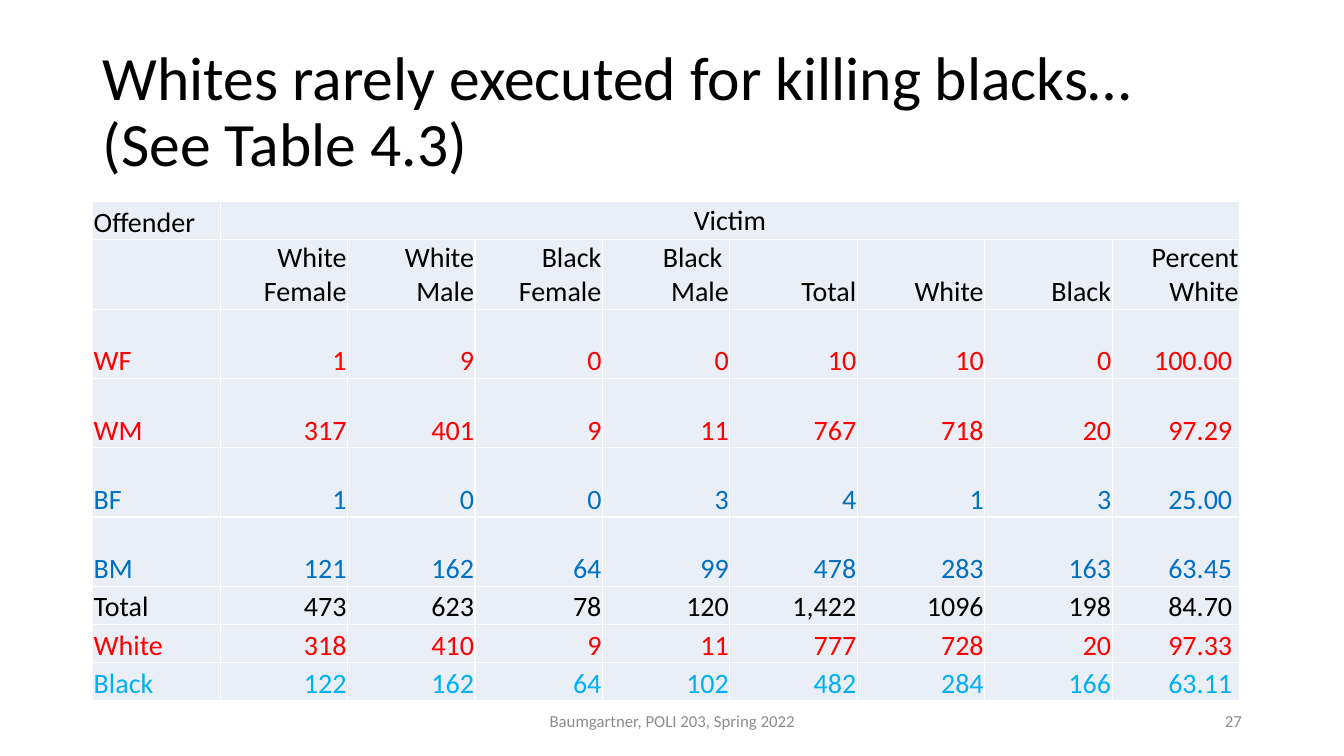
from lxml.etree import SubElement
from pptx import Presentation
from pptx.dml.color import RGBColor
from pptx.enum.text import MSO_ANCHOR, PP_ALIGN
from pptx.oxml.ns import qn
from pptx.util import Pt

FONT = "Calibri"
BLACK = RGBColor(0x00, 0x00, 0x00)
RED = RGBColor(0xFF, 0x00, 0x00)
BLUE = RGBColor(0x00, 0x70, 0xC0)
SKY = RGBColor(0x00, 0xB0, 0xF0)
GREY = RGBColor(0x8C, 0x8C, 0x8C)
PALE = RGBColor(0xEA, 0xEF, 0xF7)
WHITE = RGBColor(0xFF, 0xFF, 0xFF)

TITLE = "Whites rarely executed for killing blacks… (See Table 4.3)"
FOOTER = "Baumgartner, POLI 203, Spring 2022"
PAGE = "27"

SHORT, TALL = 27.3, 49.5
ROWS = [
    (SHORT, BLACK, ["Offender", "Victim"]),
    (TALL, BLACK, ["", "White Female", "White Male", "Black Female", "Black \nMale",
                   "Total", "White", "Black", "Percent White"]),
    (TALL, RED, ["WF", "1", "9", "0", "0", "10", "10", "0", "100.00 "]),
    (TALL, RED, ["WM", "317", "401", "9", "11", "767", "718", "20", "97.29 "]),
    (TALL, BLUE, ["BF", "1", "0", "0", "3", "4", "1", "3", "25.00 "]),
    (TALL, BLUE, ["BM", "121", "162", "64", "99", "478", "283", "163", "63.45 "]),
    (SHORT, BLACK, ["Total", "473", "623", "78", "120", "1,422", "1096", "198", "84.70 "]),
    (SHORT, RED, ["White", "318", "410", "9", "11", "777", "728", "20", "97.33 "]),
    (SHORT, SKY, ["Black", "122", "162", "64", "102", "482", "284", "166", "63.11 "]),
]
COLUMNS = 9
COLUMN_WIDTH = 91.04
TABLE_LEFT, TABLE_TOP = 66.24, 144
CELL_INSET = 0.72


def write(frame, text, size, color, align):
    for index, line in enumerate(text.split("\n")):
        paragraph = frame.paragraphs[0] if index == 0 else frame.add_paragraph()
        paragraph.alignment = align
        paragraph.font.size = Pt(size)
        if line:
            run = paragraph.add_run()
            run.text = line
            run.font.name = FONT
            run.font.size = Pt(size)
            run.font.color.rgb = color


def add_text(slide, box, text, size, color, align):
    frame = slide.shapes.add_textbox(*map(Pt, box)).text_frame
    frame.word_wrap = True
    frame.vertical_anchor = MSO_ANCHOR.MIDDLE
    write(frame, text, size, color, align)
    return frame


def add_borders(cell):
    properties = cell._tc.get_or_add_tcPr()
    for side in ("a:lnL", "a:lnR", "a:lnT", "a:lnB"):
        line = SubElement(properties, qn(side), w=str(Pt(1)))
        fill = SubElement(line, qn("a:solidFill"))
        SubElement(fill, qn("a:srgbClr"), val=str(WHITE))


def add_victim_table(slide):
    height = sum(row_height for row_height, _, _ in ROWS)
    table = slide.shapes.add_table(
        len(ROWS), COLUMNS, Pt(TABLE_LEFT), Pt(TABLE_TOP),
        Pt(COLUMN_WIDTH * COLUMNS), Pt(height)).table
    table.first_row = table.horz_banding = False
    for column in table.columns:
        column.width = Pt(COLUMN_WIDTH)
    table.cell(0, 1).merge(table.cell(0, COLUMNS - 1))
    for r, (row_height, color, texts) in enumerate(ROWS):
        table.rows[r].height = Pt(row_height)
        for c in range(COLUMNS):
            cell = table.cell(r, c)
            add_borders(cell)
            cell.fill.solid()
            cell.fill.fore_color.rgb = PALE
            cell.margin_left = cell.margin_right = cell.margin_top = Pt(CELL_INSET)
            cell.margin_bottom = 0
            cell.vertical_anchor = MSO_ANCHOR.BOTTOM
            if c < len(texts):
                align = PP_ALIGN.LEFT if c == 0 else PP_ALIGN.RIGHT
                if cell.is_merge_origin:
                    align = PP_ALIGN.CENTER
                    cell.vertical_anchor = MSO_ANCHOR.MIDDLE
                write(cell.text_frame, texts[c], 20, color, align)


def main():
    deck = Presentation()
    deck.slide_width, deck.slide_height = Pt(960), Pt(540)
    slide = deck.slides.add_slide(deck.slide_layouts[6])
    title = add_text(slide, (66.24, 28.8, 828, 104.4), TITLE, 44, BLACK, PP_ALIGN.LEFT)
    title.paragraphs[0].line_spacing = 0.9
    add_victim_table(slide)
    add_text(slide, (318.24, 500.4, 324, 28.8), FOOTER, 12, GREY, PP_ALIGN.CENTER)
    add_text(slide, (678.24, 500.4, 216, 28.8), PAGE, 12, GREY, PP_ALIGN.RIGHT)
    deck.save("out.pptx")


if __name__ == "__main__":
    main()
